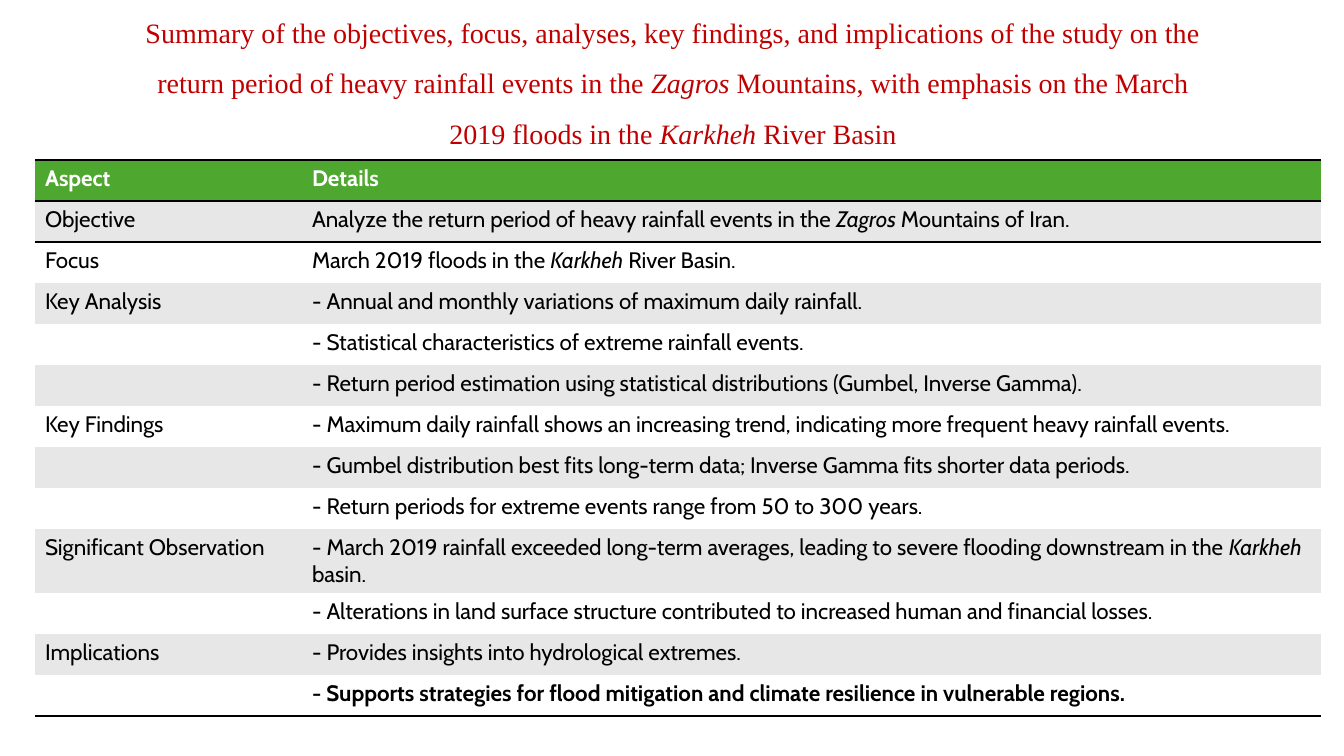
import pptx
import pptx.util
import pptx.dml.color
import pptx.enum.text
import pptx.oxml
import pptx.oxml.ns

PX = 914400 / 100.8
BLACK, WHITE, GREEN, GREY, RED = "000000", "FFFFFF", "4EA72E", "E7E7E7", "C00000"
NO_GRID = "{2D5ABB26-0587-4C30-8999-92F81FD0307C}"


def px(n):
    return round(n * PX)


def write(para, text, font, size, color, bold=False):
    """Fill the paragraph; parts between asterisks are italic."""
    for i, part in enumerate(text.split("*")):
        if part:
            run = para.add_run()
            run.text = part
            run.font.name = font
            run.font.size = pptx.util.Pt(size)
            run.font.bold = bold
            run.font.italic = i % 2 == 1
            run.font.color.rgb = pptx.dml.color.RGBColor.from_string(color)


rows = [
    ("Aspect", "Details"),
    ("Objective", "Analyze the return period of heavy rainfall events in the *Zagros* Mountains of Iran."),
    ("Focus", "March 2019 floods in the *Karkheh* River Basin."),
    ("Key Analysis", "- Annual and monthly variations of maximum daily rainfall."),
    ("", "- Statistical characteristics of extreme rainfall events."),
    ("", "- Return period estimation using statistical distributions (Gumbel, Inverse Gamma)."),
    ("Key Findings", "- Maximum daily rainfall shows an increasing trend, indicating more frequent heavy rainfall events."),
    ("", "- Gumbel distribution best fits long-term data; Inverse Gamma fits shorter data periods."),
    ("", "- Return periods for extreme events range from 50 to 300 years."),
    ("Significant Observation", "- March 2019 rainfall exceeded long-term averages, leading to severe flooding "
     "downstream in the *Karkheh* basin."),
    ("", "- Alterations in land surface structure contributed to increased human and financial losses."),
    ("Implications", "- Provides insights into hydrological extremes."),
    ("", "- Supports strategies for flood mitigation and climate resilience in vulnerable regions."),
]
last = len(rows) - 1

deck = pptx.Presentation()
deck.slide_width = px(1344)
deck.slide_height = px(756)
slide = deck.slides.add_slide(deck.slide_layouts[6])

# Table
frame = slide.shapes.add_table(len(rows), 2, px(35), px(160), px(1286), px(41 * len(rows)))
table = frame.table
table.first_row = False
table.horz_banding = False
frame._element.find(".//" + pptx.oxml.ns.qn("a:tableStyleId")).text = NO_GRID
for col, width in zip(table.columns, (267, 1019)):
    col.width = px(width)

for r, texts in enumerate(rows):
    table.rows[r].height = px(41)
    fill = GREEN if r == 0 else GREY if r % 2 else WHITE
    sides = {0: ("lnT", "lnB"), 1: ("lnT",), last: ("lnB",)}.get(r, ())
    for c, text in enumerate(texts):
        cell = table.cell(r, c)
        write(cell.text_frame.paragraphs[0], text, "Cabin", 16,
              BLACK if r else WHITE, r in (0, last))
        props = cell._tc.get_or_add_tcPr()
        for side in sides:
            props.append(pptx.oxml.parse_xml(
                f'<a:{side} {pptx.oxml.ns.nsdecls("a")} w="25400"><a:solidFill>'
                f'<a:srgbClr val="{BLACK}"/></a:solidFill></a:{side}>'))
        cell.fill.solid()
        cell.fill.fore_color.rgb = pptx.dml.color.RGBColor.from_string(fill)

# Title
box = slide.shapes.add_textbox(px(118), px(11), px(1110), px(126))
body = box.text_frame
body.word_wrap = True
body.auto_size = pptx.enum.text.MSO_AUTO_SIZE.NONE
body.vertical_anchor = pptx.enum.text.MSO_ANCHOR.MIDDLE
head = body.paragraphs[0]
head.alignment = pptx.enum.text.PP_ALIGN.CENTER
head.line_spacing = 1.5
write(head, "Summary of the objectives, focus, analyses, key findings, and implications of the study "
      "on the return period of heavy rainfall events in the *Zagros* Mountains, with emphasis on "
      "the March 2019 floods in the *Karkheh* River Basin", "Times New Roman", 20, RED)

deck.save("out.pptx")
